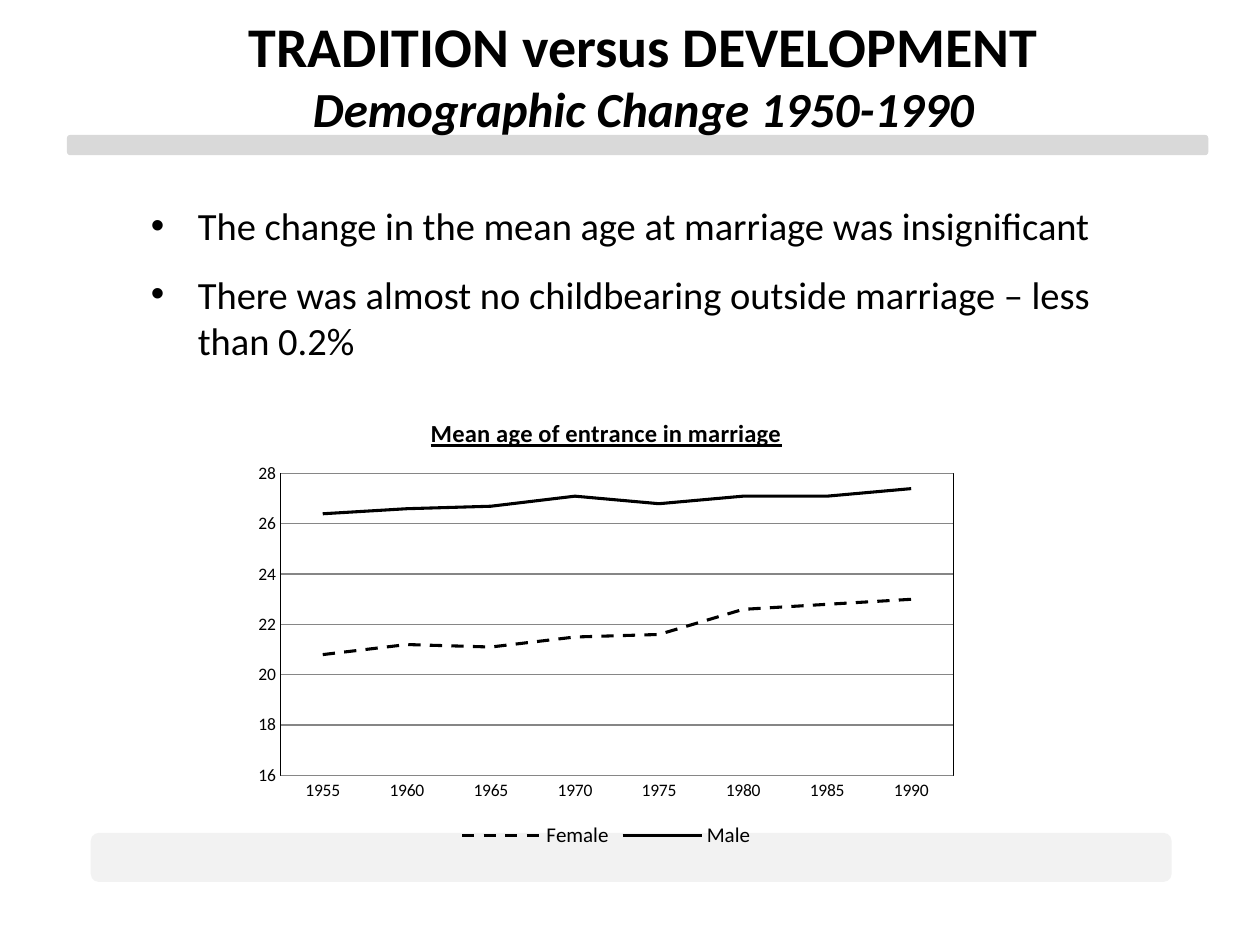
from lxml import etree
from pptx import Presentation
from pptx import util as u
from pptx.chart.data import CategoryChartData
from pptx.dml.color import RGBColor
from pptx.enum import chart as ch, dml, shapes, text
from pptx.oxml import parse_xml
from pptx.oxml.ns import nsdecls, qn

FONT = "Calibri"
BLACK, GRID = "000000", "868686"


def rgb(value):
    return RGBColor.from_string(value)


def add_text(p, content, size, bold=False, italic=False):
    r = p.add_run()
    r.text = content
    f = r.font
    f.name, f.size, f.bold, f.italic = FONT, u.Pt(size), bold, italic
    f.color.rgb = rgb(BLACK)


prs = Presentation()
prs.slide_width, prs.slide_height = u.Cm(25.4), u.Cm(19.05)
s = prs.slides.add_slide(prs.slide_layouts[5])

# Header and footer bars
for left, top, width, height, color in (
    (1.35, 2.72, 23.01, 0.41, "D9D9D9"),
    (1.83, 16.79, 21.79, 0.99, "F2F2F2"),
):
    bar = s.shapes.add_shape(shapes.MSO_SHAPE.ROUNDED_RECTANGLE,
                             u.Cm(left), u.Cm(top), u.Cm(width), u.Cm(height))
    bar.shadow.inherit = False
    bar.fill.solid()
    bar.fill.fore_color.rgb = rgb(color)
    bar.line.fill.background()

# Title, brought in front of the header bar
title = s.shapes.title
title.left, title.top, title.width, title.height = u.Cm(2.24), u.Cm(0.1), u.Cm(21.46), u.Cm(2.82)
s.shapes._spTree.append(title._element)
tf = title.text_frame
tf.vertical_anchor = text.MSO_ANCHOR.TOP
tf.auto_size = text.MSO_AUTO_SIZE.NONE
add_text(tf.paragraphs[0], "TRADITION versus DEVELOPMENT", 32, bold=True)
add_text(tf.add_paragraph(), "Demographic Change 1950-1990", 28, bold=True, italic=True)
for p in tf.paragraphs:
    p.alignment = text.PP_ALIGN.CENTER

# Bullets
tf = s.shapes.add_textbox(u.Cm(2.79), u.Cm(3.94), u.Cm(20.12), u.Cm(3.56)).text_frame
tf.word_wrap = True
bullets = (
    "The change in the mean age at marriage was insignificant",
    "There was almost no childbearing outside marriage – less than 0.2%",
)
for i, bullet in enumerate(bullets):
    p = tf.add_paragraph() if i else tf.paragraphs[0]
    p.space_before = u.Pt(13 * i)
    add_text(p, bullet, 22)
    pPr = p._p.get_or_add_pPr()
    pPr.set("marL", str(u.Cm(0.95)))
    pPr.set("indent", str(-u.Cm(0.95)))
    etree.SubElement(pPr, qn("a:buFont")).set("typeface", "Arial")
    etree.SubElement(pPr, qn("a:buChar")).set("char", "•")

# Line chart
data = CategoryChartData()
data.categories = [str(year) for year in range(1955, 1991, 5)]
data.add_series("Female", (20.8, 21.2, 21.1, 21.5, 21.6, 22.6, 22.8, 23))
data.add_series("Male", (26.4, 26.6, 26.7, 27.1, 26.8, 27.1, 27.1, 27.4))
chart = s.shapes.add_chart(ch.XL_CHART_TYPE.LINE, u.Cm(4.93), u.Cm(7.98),
                           u.Cm(14.58), u.Cm(9.22), data).chart
chart.font.name, chart.font.size = FONT, u.Pt(10)
chart.font.color.rgb = rgb(BLACK)

chart.has_title = True
p = chart.chart_title.text_frame.paragraphs[0]
add_text(p, "Mean age of entrance in marriage", 14, bold=True)
p.runs[0].font.underline = True

chart.has_legend = True
chart.legend.position = ch.XL_LEGEND_POSITION.BOTTOM
chart.legend.include_in_layout = False
chart.legend.font.size = u.Pt(12)
chart.legend.font.name = FONT
chart.legend.font.color.rgb = rgb(BLACK)

ages, years = chart.value_axis, chart.category_axis
ages.minimum_scale, ages.maximum_scale, ages.major_unit = 16, 28, 2
ages.has_major_gridlines = True
ages.format.line.fill.background()
for axis in (ages, years):
    axis.major_tick_mark = axis.minor_tick_mark = ch.XL_TICK_MARK.NONE
for line in (ages.major_gridlines.format.line, years.format.line):
    line.color.rgb = rgb(GRID)
    line.width = u.Pt(0.75)

for series, dash in zip(chart.plots[0].series, (dml.MSO_LINE.DASH, None)):
    series.smooth = False
    series.marker.style = ch.XL_MARKER_STYLE.NONE
    line = series.format.line
    line.color.rgb = rgb(BLACK)
    line.width = u.Pt(1.75)
    if dash:
        line.dash_style = dash

# Plot area: fixed inner position and a thin black frame
plot_area = chart._chartSpace.chart.plotArea
for layout in plot_area.findall(qn("c:layout")):
    plot_area.remove(layout)
position = "".join(f'<c:{tag} val="{val}"/>' for tag, val in (
    ("layoutTarget", "inner"), ("xMode", "edge"), ("yMode", "edge"),
    ("x", 0.05), ("y", 0.17), ("w", 0.93), ("h", 0.66)))
plot_area.insert(0, parse_xml(
    f'<c:layout {nsdecls("c")}><c:manualLayout>{position}</c:manualLayout></c:layout>'))
plot_area.append(parse_xml(
    f'<c:spPr {nsdecls("c", "a")}><a:noFill/><a:ln w="9525"><a:solidFill>'
    f'<a:srgbClr val="{BLACK}"/></a:solidFill></a:ln></c:spPr>'))

prs.save("out.pptx")
